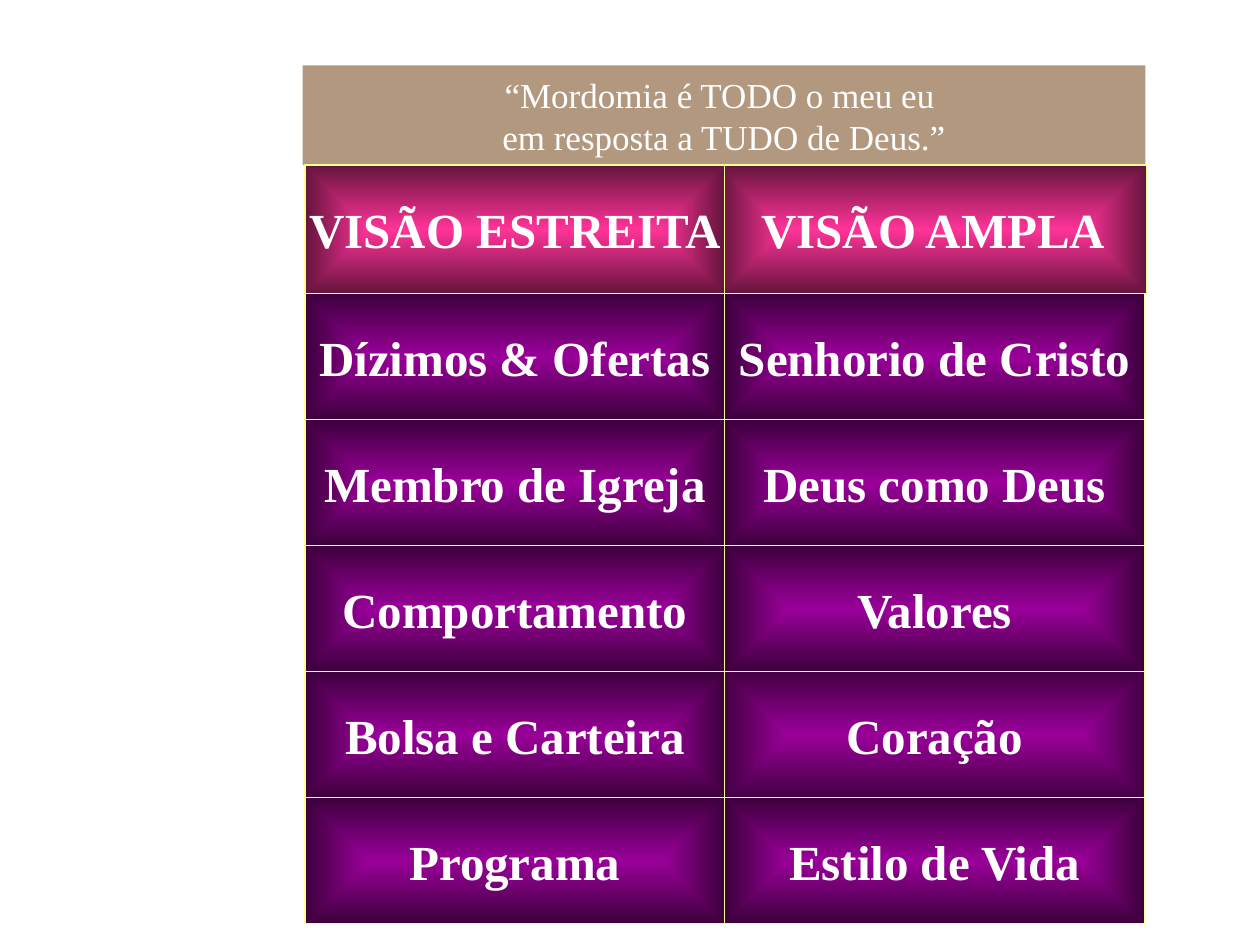
from lxml.etree import SubElement
from pptx import Presentation
from pptx.dml.color import RGBColor
from pptx.enum.shapes import MSO_SHAPE
from pptx.enum.text import MSO_ANCHOR, MSO_AUTO_SIZE, PP_ALIGN
from pptx.oxml.ns import qn
from pptx.util import Cm, Pt

QUOTE = ["“Mordomia é TODO o meu eu ", "em resposta a TUDO de Deus.”"]
HEADINGS = ("VISÃO ESTREITA", "VISÃO AMPLA")
VIEWS = [
    ("Dízimos & Ofertas", "Senhorio de Cristo"),
    ("Membro de Igreja", "Deus como Deus"),
    ("Comportamento", "Valores"),
    ("Bolsa e Carteira", "Coração"),
    ("Programa", "Estilo de Vida"),
]

FONT = "Times New Roman"
WHITE = "FFFFFF"
BORDER = "FFFF99"
PURPLE = ("990099", "3C003C")
SOFT_PURPLE = ("990099", "440044")
PINK = ("FF3399", "64143C")

LEFT, CELL_WIDTH, CELL_HEIGHT = 6.15, 8.46, 2.54
HEADING_TOP, HEADING_HEIGHT = 3.33, 2.59
HEADING_OVERLAP, HEADING_OVERHANG = 0.1, 0.05
FIRST_ROW_TOP = HEADING_TOP + HEADING_HEIGHT


def color(hex_string):
    return RGBColor.from_string(hex_string)


def add_run(paragraph, text, size, bold):
    run = paragraph.add_run()
    run.text = text
    run.font.name = FONT
    run.font.size = Pt(size)
    run.font.bold = bold
    run.font.color.rgb = color(WHITE)


def fill_from_center(cell, shades):
    cell.fill.gradient()
    for stop, shade in zip(cell.fill.gradient_stops, shades):
        stop.color.rgb = color(shade)
    gradient = cell.element.spPr.find(qn("a:gradFill"))
    gradient.remove(gradient.find(qn("a:lin")))
    focus = SubElement(gradient, qn("a:path"), {"path": "shape"})
    SubElement(focus, qn("a:fillToRect"), dict.fromkeys("ltrb", "50000"))


def add_cell(slide, text, left, top, width, height, shades):
    cell = slide.shapes.add_shape(
        MSO_SHAPE.RECTANGLE, Cm(left), Cm(top), Cm(width), Cm(height))
    cell.shadow.inherit = False
    fill_from_center(cell, shades)
    cell.line.color.rgb = color(BORDER)
    cell.line.width = Pt(0.75)
    frame = cell.text_frame
    frame.word_wrap = False
    frame.vertical_anchor = MSO_ANCHOR.MIDDLE
    paragraph = frame.paragraphs[0]
    paragraph.alignment = PP_ALIGN.CENTER
    add_run(paragraph, text, 28, True)


def add_quote(slide):
    quote = slide.shapes.title
    quote.left, quote.top = Cm(6.1), Cm(1.32)
    quote.width, quote.height = Cm(16.99), Cm(2.01)
    quote.fill.solid()
    quote.fill.fore_color.rgb = color("663300")
    tone = quote.element.spPr.find(qn("a:solidFill"))[0]
    SubElement(tone, qn("a:alpha"), {"val": "50000"})
    frame = quote.text_frame
    frame.word_wrap = True
    frame.auto_size = MSO_AUTO_SIZE.NONE
    frame.vertical_anchor = MSO_ANCHOR.MIDDLE
    paragraph = frame.paragraphs[0]
    paragraph.alignment = PP_ALIGN.CENTER
    add_run(paragraph, QUOTE[0], 20, False)
    paragraph.add_line_break()
    add_run(paragraph, QUOTE[1], 20, False)


def main():
    deck = Presentation()
    deck.slide_width, deck.slide_height = Cm(25.4), Cm(19.05)
    slide = deck.slides.add_slide(deck.slide_layouts[5])
    add_quote(slide)

    for row, views in enumerate(VIEWS):
        for column, view in enumerate(views):
            add_cell(slide, view, LEFT + column * CELL_WIDTH,
                     FIRST_ROW_TOP + row * CELL_HEIGHT, CELL_WIDTH, CELL_HEIGHT,
                     SOFT_PURPLE if view == "Coração" else PURPLE)

    narrow, broad = HEADINGS
    add_cell(slide, broad, LEFT + CELL_WIDTH - HEADING_OVERLAP, HEADING_TOP,
             CELL_WIDTH + HEADING_OVERLAP + HEADING_OVERHANG, HEADING_HEIGHT, PINK)
    add_cell(slide, narrow, LEFT, HEADING_TOP, CELL_WIDTH, HEADING_HEIGHT, PINK)

    deck.save("out.pptx")


if __name__ == "__main__":
    main()
